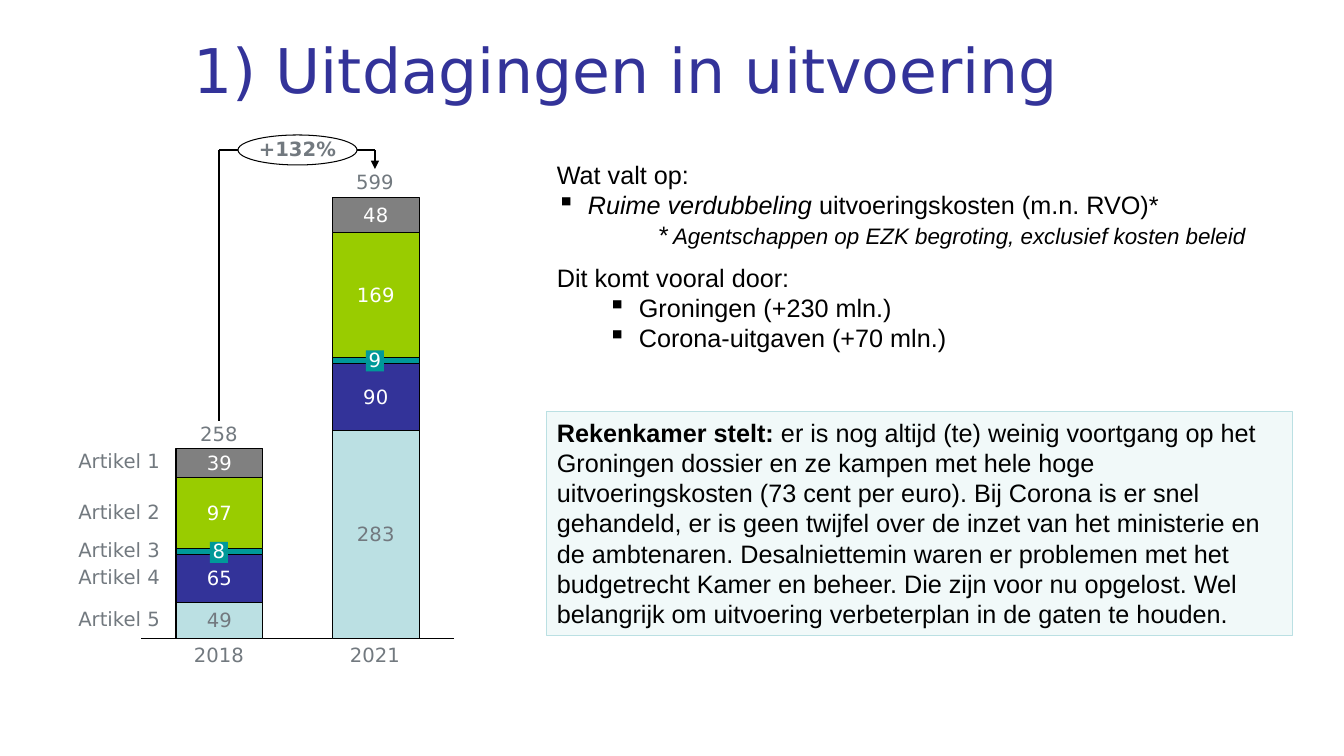
"""Build the slide on rising implementation costs with a stacked column chart."""
import pptx
import pptx.chart.data
import pptx.dml.color
import pptx.enum.chart
import pptx.enum.shapes
import pptx.enum.text
import pptx.oxml
import pptx.oxml.ns
import pptx.util
from lxml import etree

SCALE = 914400 / 100.8
ALIGN = pptx.enum.text.PP_ALIGN
ANCHOR = pptx.enum.text.MSO_ANCHOR
SHAPE = pptx.enum.shapes.MSO_SHAPE
GREY, WHITE, BLACK, TEAL, PALE = "72797F", "FFFFFF", "000000", "009999", "BBE0E3"
SANS = {"name": "DejaVu Sans", "size": pptx.util.Pt(14)}
BODY = {"name": "Arial", "size": pptx.util.Pt(18)}
PITCH = pptx.util.Pt(21.6)
YEARS = {"2018": 219, "2021": 375}
COSTS = [
    ("Artikel 5", (49, 283), PALE, GREY),
    ("Artikel 4", (65, 90), "333399", WHITE),
    ("Artikel 3", (8, 9), TEAL, None),
    ("Artikel 2", (97, 169), "99CC00", WHITE),
    ("Artikel 1", (39, 48), "808080", WHITE),
]
BASE, TALL, PEAK = 639, 442, 599


def px(*nums):
    """Turn pixel lengths into EMU."""
    return [pptx.util.Emu(round(num * SCALE)) for num in nums]


def rgb(code):
    """Turn a hex string into a colour."""
    return pptx.dml.color.RGBColor.from_string(code)


def style(item, values):
    """Set each named value on an item."""
    for key, value in values.items():
        setattr(item, key, value)


def paint(font, values, code):
    """Format a font and give it a solid colour."""
    style(font, values)
    font.color.rgb = rgb(code)


def fill(item, code):
    """Give an item a solid fill."""
    item.fill.solid()
    item.fill.fore_color.rgb = rgb(code)


def edge(line, code, width=0.75):
    """Draw an outline."""
    line.color.rgb = rgb(code)
    line.width = pptx.util.Pt(width)


def level(year, part):
    """Return the height on the slide of the middle of a bar part."""
    vals = [cost[1][year] for cost in COSTS]
    return BASE - (sum(vals[:part]) + vals[part] / 2) * TALL / PEAK


def block(slide, kind, box, back, rim=None):
    """Add a filled shape without shadow."""
    shape = slide.shapes.add_shape(kind, *px(*box))
    shape.shadow.inherit = False
    fill(shape, back)
    if rim:
        edge(shape.line, rim)
    else:
        shape.line.fill.background()
    return shape


def write(shape, text, code, align=ALIGN.CENTER, bold=False):
    """Put one chart label into a shape."""
    frame = shape.text_frame
    style(frame, {"margin_left": 0, "margin_right": 0, "margin_top": 0, "margin_bottom": 0,
                  "word_wrap": False, "vertical_anchor": ANCHOR.MIDDLE})
    para = frame.paragraphs[0]
    style(para, {"alignment": align, "line_spacing": 0.9})
    run = para.add_run()
    run.text = text
    paint(run.font, SANS | {"bold": bold}, code)


def label(slide, text, box, align=ALIGN.CENTER):
    """Add a grey label beside the chart."""
    write(slide.shapes.add_textbox(*px(*box)), text, GREY, align)


def prose(frame, rows):
    """Fill a frame with rows of indent, bullet flag, gap and runs."""
    style(frame, {"word_wrap": True, "vertical_anchor": ANCHOR.TOP})
    for num, (left, mark, gap, runs) in enumerate(rows):
        para = frame.paragraphs[0] if num == 0 else frame.add_paragraph()
        props = para._p.get_or_add_pPr()
        props.set("marL", str(px(left)[0]))
        if mark:
            props.set("indent", str(px(-31)[0]))
            bullet = etree.SubElement(props, pptx.oxml.ns.qn("a:buChar"))
            bullet.set("char", "▪")
        style(para, {"alignment": ALIGN.LEFT, "line_spacing": PITCH})
        if gap:
            para.space_before = pptx.util.Pt(gap)
        for text, extra in runs:
            run = para.add_run()
            run.text = text
            paint(run.font, BODY | extra, BLACK)


def chart(slide):
    """Add the stacked columns."""
    data = pptx.chart.data.CategoryChartData()
    data.categories = list(YEARS)
    for name, vals, _, _ in COSTS:
        data.add_series(name, vals)
    kind = pptx.enum.chart.XL_CHART_TYPE.COLUMN_STACKED
    graph = slide.shapes.add_chart(kind, *px(132, 188, 331, 460), data).chart
    style(graph, {"has_legend": False, "has_title": False})
    paint(graph.font, SANS, BLACK)
    none = pptx.enum.chart.XL_TICK_MARK.NONE
    style(graph.category_axis, {"major_tick_mark": none, "minor_tick_mark": none,
          "tick_label_position": pptx.enum.chart.XL_TICK_LABEL_POSITION.NONE})
    edge(graph.category_axis.format.line, BLACK)
    style(graph.value_axis, {"visible": False, "has_major_gridlines": False,
                             "minimum_scale": 0, "maximum_scale": PEAK})
    plot = graph.plots[0]
    style(plot, {"gap_width": 80, "overlap": 100, "vary_by_categories": False})
    for series, (_, _, back, ink) in zip(plot.series, COSTS):
        fill(series.format, back)
        edge(series.format.line, BLACK)
        if ink:
            marks = series.data_labels
            style(marks, {"show_value": True,
                          "position": pptx.enum.chart.XL_LABEL_POSITION.CENTER})
            paint(marks.font, SANS, ink)
    area = graph._chartSpace.chart.plotArea
    for old in area.findall(pptx.oxml.ns.qn("c:layout")):
        area.remove(old)
    layout = etree.Element(pptx.oxml.ns.qn("c:layout"))
    manual = etree.SubElement(layout, pptx.oxml.ns.qn("c:manualLayout"))
    for tag, value in (("layoutTarget", "inner"), ("xMode", "edge"), ("yMode", "edge"),
                       ("x", "0.028"), ("y", "0.02"), ("w", "0.945"), ("h", "0.96")):
        etree.SubElement(manual, pptx.oxml.ns.qn("c:" + tag)).set("val", value)
    area.insert(0, layout)


def line(slide, start, end, head):
    """Add a straight line, with an arrowhead if asked."""
    link = slide.shapes.add_connector(pptx.enum.shapes.MSO_CONNECTOR.STRAIGHT,
                                      *px(*start, *end))
    edge(link.line, BLACK, 1)
    if head:
        tail = etree.SubElement(link.line._get_or_add_ln(), pptx.oxml.ns.qn("a:tailEnd"))
        tail.set("type", "triangle")
    etree.SubElement(link._element.spPr, pptx.oxml.ns.qn("a:effectLst"))


def main():
    """Build and save the slide."""
    deck = pptx.Presentation()
    deck.slide_width, deck.slide_height = px(1344, 756)
    slide = deck.slides.add_slide(deck.slide_layouts[5])
    title = slide.shapes.title
    style(title, dict(zip(("left", "top", "width", "height"), px(183, 6, 1125, 126))))
    title.text_frame.text = "1) Uitdagingen in uitvoering"
    title.text_frame.vertical_anchor = ANCHOR.MIDDLE
    para = title.text_frame.paragraphs[0]
    para.alignment = ALIGN.LEFT
    paint(para.runs[0].font, SANS | {"size": pptx.util.Pt(44)}, "333399")

    chart(slide)
    turns = [(219, 421), (219, 150), (375, 150), (375, 169)]
    for start, end in zip(turns, turns[1:]):
        line(slide, start, end, end == turns[-1])
    for part, cost in enumerate(COSTS):
        label(slide, cost[0], (77, level(0, part) - 11, 83, 21), ALIGN.RIGHT)
    for num, (year, mid) in enumerate(YEARS.items()):
        total = sum(cost[1][num] for cost in COSTS)
        label(slide, year, (mid - 26, 646, 52, 21))
        label(slide, str(total), (mid - 22, BASE - total * TALL / PEAK - 24, 44, 21))
        tag = block(slide, SHAPE.RECTANGLE, (mid - 9, level(num, 2) - 10, 18, 21), TEAL)
        write(tag, str(COSTS[2][1][num]), WHITE)
    oval = block(slide, SHAPE.OVAL, (238, 135, 119, 30), WHITE, BLACK)
    write(oval, "+132%", GREY, bold=True)

    note = {"italic": True, "size": pptx.util.Pt(16)}
    prose(slide.shapes.add_textbox(*px(547, 154, 779, 207)).text_frame, [
        (0, False, 0, [("Wat valt op:", {})]),
        (31, True, 0, [("Ruime verdubbeling", {"italic": True}),
                       (" uitvoeringskosten (m.n. RVO)*", {})]),
        (101, False, 0, [("*", {"italic": True}),
                         (" Agentschappen op EZK begroting, exclusief kosten beleid", note)]),
        (0, False, 9, [("Dit komt vooral door:", {})]),
        (82, True, 0, [("Groningen (+230 mln.)", {})]),
        (82, True, 0, [("Corona-uitgaven (+70 mln.)", {})]),
    ])
    panel = block(slide, SHAPE.RECTANGLE, (547, 412, 746, 224), "F1F9F9", PALE)
    prose(panel.text_frame, [(0, False, 0, [
        ("Rekenkamer stelt: ", {"bold": True}),
        ("er is nog altijd (te) weinig voortgang op het Groningen dossier en ze kampen met "
         "hele hoge uitvoeringskosten (73 cent per euro). Bij Corona is er snel gehandeld, "
         "er is geen twijfel over de inzet van het ministerie en de ambtenaren. "
         "Desalniettemin waren er problemen met het budgetrecht Kamer en beheer. Die zijn "
         "voor nu opgelost. Wel belangrijk om uitvoering verbeterplan in de gaten te "
         "houden.", {})])])
    deck.save("out.pptx")


if __name__ == "__main__":
    main()
